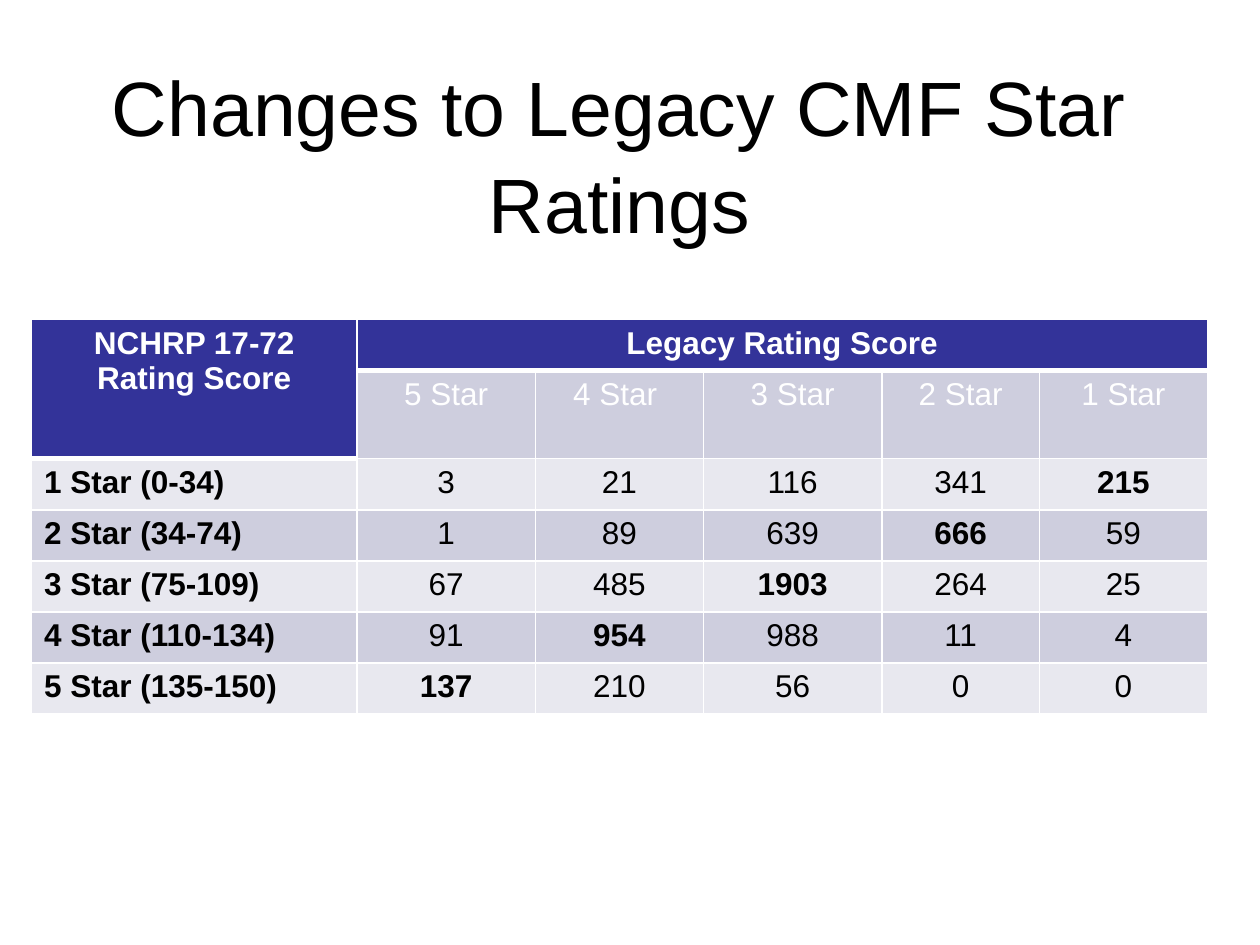
"""Build the slide on changes to legacy star ratings."""
import pptx
import pptx.dml.color
import pptx.enum.text
import pptx.oxml
import pptx.oxml.ns
import pptx.util

Pt = pptx.util.Pt
RGBColor = pptx.dml.color.RGBColor
ALIGN = pptx.enum.text.PP_ALIGN
MIDDLE = pptx.enum.text.MSO_ANCHOR.MIDDLE

BLACK = RGBColor(0x00, 0x00, 0x00)
WHITE = RGBColor(0xFF, 0xFF, 0xFF)
NAVY = RGBColor(0x33, 0x33, 0x99)
DARK = RGBColor(0xCE, 0xCE, 0xDE)
LIGHT = RGBColor(0xE8, 0xE8, 0xEF)

TITLE = "Changes to Legacy CMF Star Ratings"
HEADS = ["NCHRP 17-72 Rating Score", "Legacy Rating Score"]
STARS = ["5 Star", "4 Star ", "3 Star", "2 Star", "1 Star"]
BODY = [
    ["1 Star (0-34)", 3, 21, 116, 341, 215],
    ["2 Star (34-74)", 1, 89, 639, 666, 59],
    ["3 Star (75-109)", 67, 485, 1903, 264, 25],
    ["4 Star (110-134)", 91, 954, 988, 11, 4],
    ["5 Star (135-150)", 137, 210, 56, 0, 0],
]
WIDTHS = [186, 102, 96, 102, 90, 96]
HEIGHT = 29.2


class Deck:
    def __init__(self, show, font):
        self.font = font
        self.slide = show.slides.add_slide(show.slide_layouts[6])

    def text(self, para, words, size, color, bold=False, align=ALIGN.CENTER):
        para.alignment = align
        run = para.add_run()
        run.text = words
        run.font.name = self.font
        run.font.size = Pt(size)
        run.font.bold = bold
        run.font.color.rgb = color

    def title(self, words, left, top, width, height):
        box = self.slide.shapes.add_textbox(Pt(left), Pt(top), Pt(width), Pt(height))
        frame = box.text_frame
        frame.word_wrap = True
        frame.vertical_anchor = MIDDLE
        para = frame.paragraphs[0]
        para.line_spacing = 1.05
        self.text(para, words, 44, BLACK)

    def table(self, left, top, widths, height, count):
        frame = self.slide.shapes.add_table(
            count, len(widths), Pt(left), Pt(top), Pt(sum(widths)), Pt(height * count))
        grid = frame.table
        for col, width in zip(grid.columns, widths):
            col.width = Pt(width)
        for row in grid.rows:
            row.height = Pt(height)
        return grid

    def border(self, cell, top, bottom):
        props = cell._tc.get_or_add_tcPr()
        for side, width in (("L", 1), ("R", 1), ("T", top), ("B", bottom)):
            props.append(pptx.oxml.parse_xml(
                f'<a:ln{side} {pptx.oxml.ns.nsdecls("a")} w="{Pt(width)}">'
                f'<a:solidFill><a:srgbClr val="{WHITE}"/></a:solidFill></a:ln{side}>'))

    def cell(self, cell, words, fill, color, bold=False, align=ALIGN.CENTER):
        cell.fill.solid()
        cell.fill.fore_color.rgb = fill
        self.text(cell.text_frame.paragraphs[0], words, 18, color, bold, align)


def rule(row, col):
    heads = 2 if col == 0 else 1
    return 3 if 0 <= row < heads else 1


def main():
    show = pptx.Presentation()
    show.slide_width, show.slide_height = Pt(720), Pt(540)
    deck = Deck(show, "Arial")
    deck.title(TITLE, 30, 42, 648, 90)

    count = len(BODY) + 2
    grid = deck.table(18, 182.5, WIDTHS, HEIGHT, count)
    for row in range(count):
        for col in range(len(WIDTHS)):
            deck.border(grid.cell(row, col), rule(row - 1, col), rule(row, col))
    grid.cell(0, 0).merge(grid.cell(1, 0))
    grid.cell(0, 1).merge(grid.cell(0, 5))

    for col, words in enumerate(HEADS):
        deck.cell(grid.cell(0, col), words, NAVY, WHITE, True)
    for col, words in enumerate(STARS, 1):
        deck.cell(grid.cell(1, col), words, DARK, WHITE)
    for row, line in enumerate(BODY):
        fill = DARK if row % 2 else LIGHT
        for col, value in enumerate(line):
            bold = col in (0, len(STARS) - row)
            align = ALIGN.CENTER if col else ALIGN.LEFT
            deck.cell(grid.cell(row + 2, col), str(value), fill, BLACK, bold, align)
    show.save("out.pptx")


if __name__ == "__main__":
    main()
